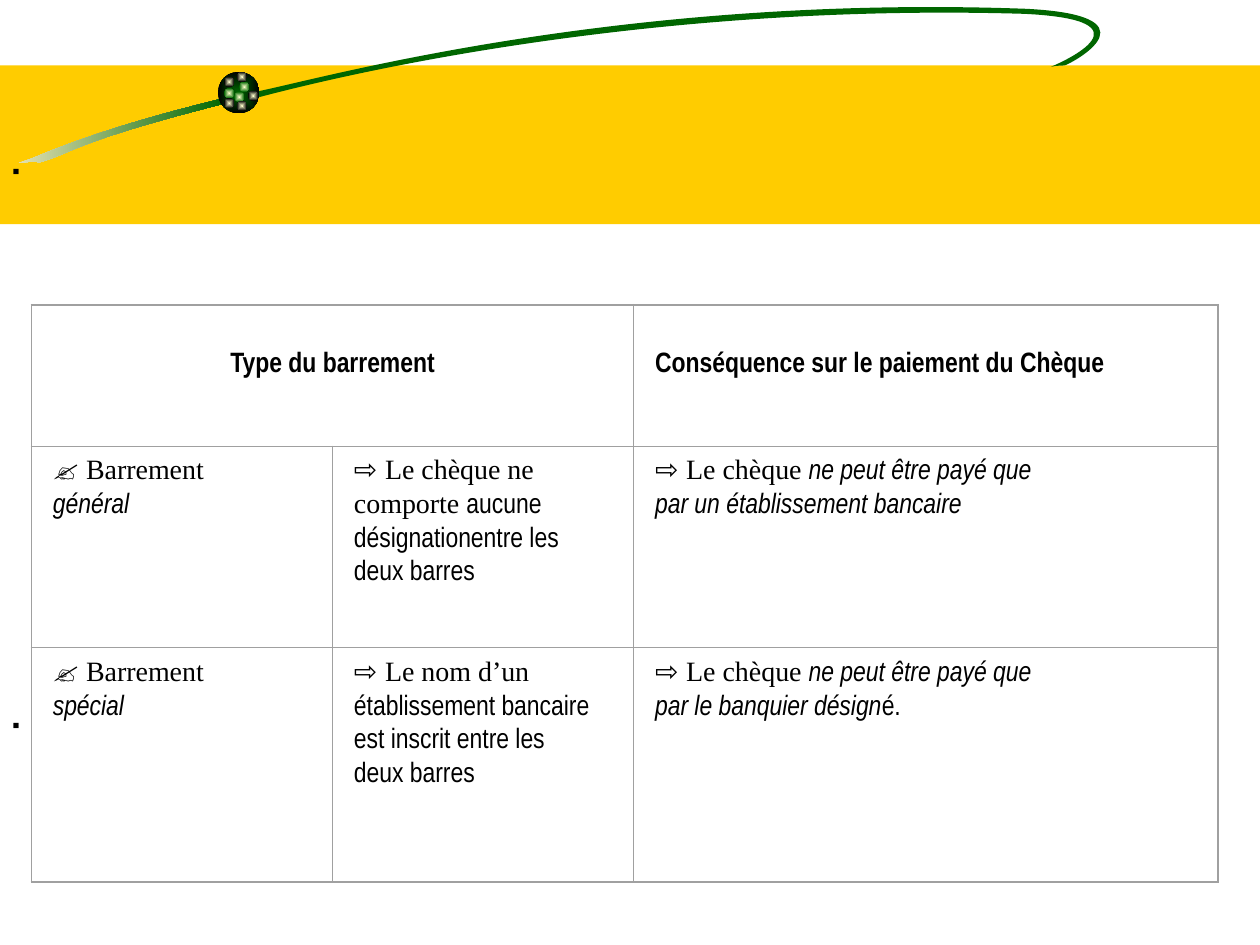
from lxml import etree
from pptx import Presentation
from pptx.dml.color import RGBColor
from pptx.enum import shapes, text
from pptx.oxml import ns
from pptx.util import Inches, Pt

HUES = {"band": "FFCC00", "green": "006600", "cream": "F5EBC1",
        "glow": "FFFFCC", "ink": "000000", "rule": "A0A0A0"}
SANS, SLIM, SERIF = "Arial", "Arial Narrow", "Times New Roman"


def hue(name):
    return RGBColor.from_string(HUES[name])


def write(para, words, font=SLIM, size=16, bold=False, italic=False):
    """Add one formatted run to a paragraph."""
    run = para.add_run()
    run.text = words
    face = run.font
    face.name, face.size = font, Pt(size)
    face.bold, face.italic = bold, italic
    face.color.rgb = hue("ink")


def fill_in(frame, lines, pitch=None):
    """Write lines, each a list of (words, format) pairs."""
    for i, line in enumerate(lines):
        para = frame.add_paragraph() if i else frame.paragraphs[0]
        if pitch:
            para.line_spacing = Pt(pitch)
        for words, style in line:
            write(para, words, **style)


class Deck:
    def __init__(self):
        self.prs = Presentation()
        self.prs.slide_width, self.prs.slide_height = Inches(10), Inches(7.5)
        self.slide = self.prs.slides.add_slide(self.prs.slide_layouts[6])

    def paint(self, shape, color, fade=None, radial=False):
        shape.shadow.inherit = False
        shape.line.fill.background()
        fill = shape.fill
        if not fade:
            fill.solid()
            fill.fore_color.rgb = hue(color)
            return
        fill.gradient()
        fill.gradient_angle = 0
        for stop, name in zip(fill.gradient_stops, (color, fade)):
            stop.color.rgb = hue(name)
        if radial:
            grad = shape._element.spPr.find(ns.qn("a:gradFill"))
            grad.remove(grad.find(ns.qn("a:lin")))
            way = etree.SubElement(grad, ns.qn("a:path"), path="shape")
            etree.SubElement(way, ns.qn("a:fillToRect"),
                             l="50000", t="50000", r="50000", b="50000")

    def shape(self, kind, x, y, w, h, *paint, **more):
        item = self.slide.shapes.add_shape(
            kind, Inches(x), Inches(y), Inches(w), Inches(h))
        self.paint(item, *paint, **more)

    def sweep(self, start, bends, *paint):
        """Draw a closed outline; each bend is two handles and an end."""
        dots = [(Inches(x), Inches(y)) for bend in bends for x, y in bend]
        pen = self.slide.shapes.build_freeform(
            Inches(start[0]), Inches(start[1]))
        pen.add_line_segments(dots, close=True)
        item = pen.convert_to_shape()
        # Join every three straight steps into one cubic bend
        steps = list(item._element.iter(ns.qn("a:lnTo")))
        for i in range(0, len(bends) * 3, 3):
            bend = etree.Element(ns.qn("a:cubicBezTo"))
            steps[i].addprevious(bend)
            for step in steps[i:i + 3]:
                bend.append(step[0])
                step.getparent().remove(step)
        self.paint(item, *paint)

    def label(self, x, y, w, h, lines):
        box = self.slide.shapes.add_textbox(
            Inches(x), Inches(y), Inches(w), Inches(h))
        box.text_frame.word_wrap = True
        fill_in(box.text_frame, lines)

    def table(self, x, y, wide, high):
        grid = self.slide.shapes.add_table(
            len(high), len(wide), Inches(x), Inches(y),
            Inches(sum(wide)), Inches(sum(high))).table
        grid.first_row = grid.horz_banding = False
        for col, w in zip(grid.columns, wide):
            col.width = Inches(w)
        for row, h in zip(grid.rows, high):
            row.height = Inches(h)
        for r in range(len(high)):
            for c in range(len(wide)):
                self.frame(grid.cell(r, c), {
                    "L": c == 0, "R": c == len(wide) - 1,
                    "T": r == 0, "B": r == len(high) - 1})
        return grid

    def frame(self, cell, sides):
        """Rule each side of a cell, heavier on the table's edge."""
        props = cell._tc.get_or_add_tcPr()
        for side, edge in sides.items():
            line = etree.SubElement(props, ns.qn("a:ln" + side),
                                    w=str(Pt(1.25 if edge else 0.5)))
            solid = etree.SubElement(line, ns.qn("a:solidFill"))
            etree.SubElement(solid, ns.qn("a:srgbClr"), val=HUES["rule"])
        cell.fill.background()
        cell.margin_left = cell.margin_right = Inches(0.17)


def main():
    deck = Deck()
    kinds = shapes.MSO_SHAPE

    # Title band and pen stroke
    deck.shape(kinds.RECTANGLE, 0, 0.52, 10, 1.26, "band")
    deck.sweep((1.78, 0.78), [
        ((0.91, 0.99), (0.49, 1.16), (0.25, 1.26)),
        ((0.01, 1.34), (0.26, 1.26), (0.31, 1.29)),
        ((0.57, 1.22), (0.57, 1.13), (1.79, 0.82))], "cream", "green")
    deck.sweep((2.02, 0.73), [
        ((2.46, 0.65), (4.86, -0.05), (8.14, 0.07)),
        ((9.17, 0.12), (8.57, 0.47), (8.45, 0.52)),
        ((8.45, 0.52), (8.38, 0.52), (8.34, 0.53)),
        ((8.44, 0.49), (9.17, 0.16), (8.13, 0.11)),
        ((5.48, 0.03), (3.2, 0.47), (2.06, 0.77))], "green")

    # Ball with glowing dots
    deck.shape(kinds.OVAL, 1.73, 0.57, 0.33, 0.33, "green", "ink", radial=True)
    for x, y, rim in [
            (1.9, 0.65, "green"), (1.78, 0.61, "ink"), (1.78, 0.7, "green"),
            (1.86, 0.73, "green"), (1.97, 0.72, "ink"), (1.88, 0.8, "ink"),
            (1.78, 0.78, "ink"), (1.88, 0.57, "ink")]:
        deck.shape(kinds.OVAL, x, y, 0.08, 0.08, "glow", rim, radial=True)

    # Table of crossings
    sans, slim, serif = ({"font": f} for f in (SANS, SLIM, SERIF))
    slant, bold = {"italic": True}, {"bold": True}
    hand, arrow = ("✍ ", sans), ("⇨ ", sans)
    pays = [arrow, ("Le chèque ", serif), ("ne peut être payé que", slant)]
    grid = deck.table(0.25, 2.42, (2.39, 2.39, 4.64), (1.12, 1.6, 1.86))
    grid.cell(0, 0).merge(grid.cell(0, 1))
    cells = {
        (0, 0): [[("Type du barrement", bold)]],
        (0, 2): [[("Conséquence sur le paiement du Chèque", bold)]],
        (1, 0): [[hand, ("Barrement", serif)], [("général", slant)]],
        (1, 1): [[arrow, ("Le chèque ne comporte ", serif),
                  ("aucune désignationentre les deux barres", slim)]],
        (1, 2): [pays, [("par un établissement bancaire", slant)]],
        (2, 0): [[hand, ("Barrement", serif)], [("spécial", slant)]],
        (2, 1): [[arrow, ("Le nom d’un", serif)],
                 [("établissement bancaire", slim)],
                 [("est inscrit entre les", slim)], [("deux barres", slim)]],
        (2, 2): [pays, [("par le banquier désign", slant), ("é.", slim)]],
    }
    for (r, c), lines in cells.items():
        cell = grid.cell(r, c)
        fill_in(cell.text_frame, lines, pitch=19.2)
        if r == 0:
            cell.margin_top = Inches(0.32)
    grid.cell(0, 0).text_frame.paragraphs[0].alignment = text.PP_ALIGN.CENTER

    # Square marks at the left edge
    for y in (1.2, 5.6):
        deck.label(0, y, 10, 0.7, [[("▪", {"font": SANS, "size": 12})]])

    deck.prs.save("out.pptx")


if __name__ == "__main__":
    main()
